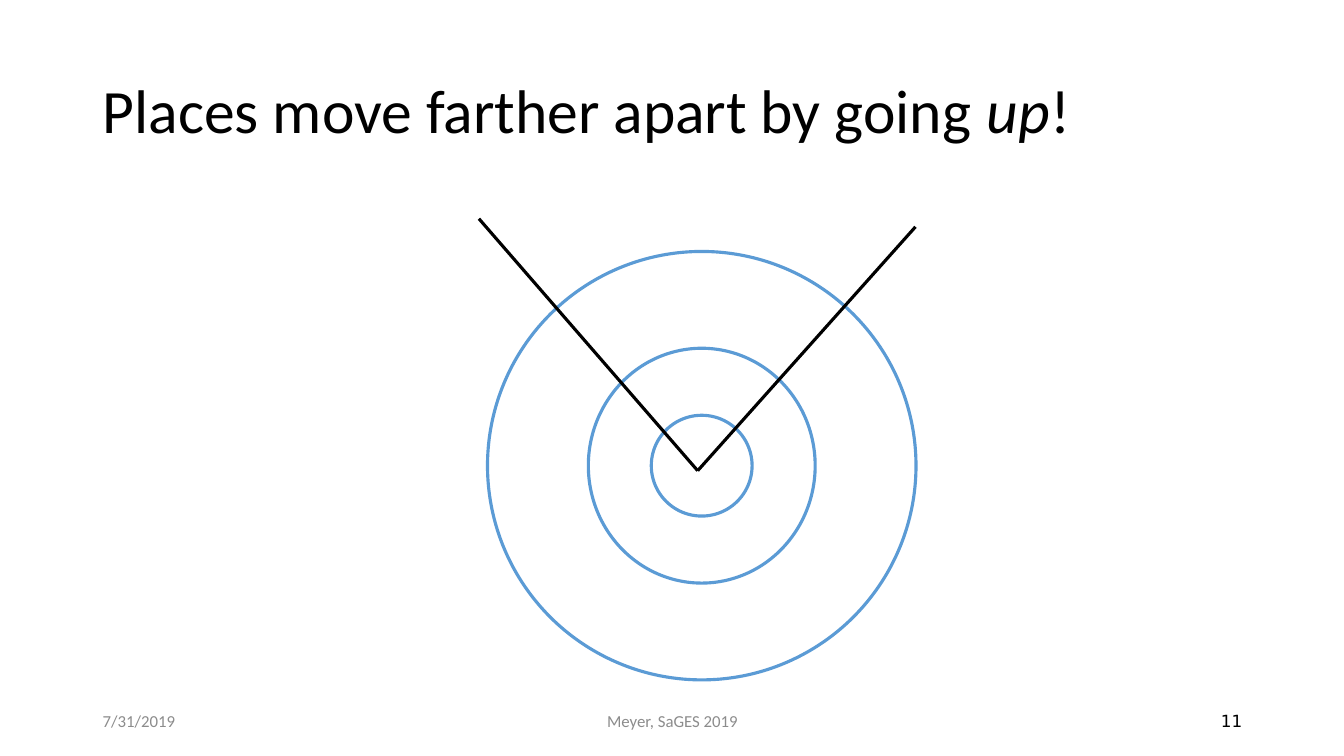
from lxml import etree
from pptx import Presentation
from pptx import util as u
from pptx.dml import color
from pptx.enum import shapes, text
from pptx.oxml import ns

BLACK = "000000"
GREY = "8C8C8C"
BLUE = "5B9BD5"
CENTRE = (6.96, 4.62)
APEX = (6.92, 4.67)


def rgb(value):
    return color.RGBColor.from_string(value)


def add_span(para, words, size, font, ink, italic=False):
    span = para.add_run()
    span.text = words
    span.font.size = u.Pt(size)
    span.font.name = font
    span.font.italic = italic
    span.font.color.rgb = rgb(ink)


def style_line(line, ink):
    line.color.rgb = rgb(ink)
    line.width = u.Pt(2.25)


def set_title(page):
    title = page.shapes.title
    title.left, title.top = u.Inches(0.92), u.Inches(0.4)
    title.width, title.height = u.Inches(11.5), u.Inches(1.45)
    frame = title.text_frame
    frame.word_wrap = True
    frame.auto_size = text.MSO_AUTO_SIZE.NONE
    frame.vertical_anchor = text.MSO_ANCHOR.MIDDLE
    para = frame.paragraphs[0]
    para.alignment = text.PP_ALIGN.LEFT
    para.line_spacing = 0.9
    add_span(para, "Places move farther apart by going ", 44, "Calibri", BLACK)
    add_span(para, "up", 44, "Calibri", BLACK, italic=True)
    add_span(para, "!", 44, "Calibri", BLACK)


def add_footer(page, left, width, words, align, font, ink):
    box = page.shapes.add_textbox(
        u.Inches(left), u.Inches(6.95), u.Inches(width), u.Inches(0.4))
    frame = box.text_frame
    frame.word_wrap = True
    frame.vertical_anchor = text.MSO_ANCHOR.MIDDLE
    para = frame.paragraphs[0]
    para.alignment = align
    add_span(para, words, 12, font, ink)


def add_ring(page, width, height):
    ring = page.shapes.add_shape(
        shapes.MSO_SHAPE.OVAL,
        u.Inches(CENTRE[0] - width / 2), u.Inches(CENTRE[1] - height / 2),
        u.Inches(width), u.Inches(height))
    ring.shadow.inherit = False
    ring.fill.background()
    style_line(ring.line, BLUE)


def add_ray(page, x, y):
    ray = page.shapes.add_connector(
        shapes.MSO_CONNECTOR.STRAIGHT,
        u.Inches(APEX[0]), u.Inches(APEX[1]), u.Inches(x), u.Inches(y))
    style_line(ray.line, BLACK)
    etree.SubElement(ray._element.spPr, ns.qn("a:effectLst"))


def main():
    deck = Presentation()
    deck.slide_width, deck.slide_height = u.Inches(13.33), u.Inches(7.5)
    page = deck.slides.add_slide(deck.slide_layouts[5])

    align = text.PP_ALIGN
    add_footer(page, 0.92, 3, "7/31/2019", align.LEFT, "Calibri", GREY)
    add_footer(page, 4.42, 4.5, "Meyer, SaGES 2019", align.CENTER, "Calibri", GREY)
    add_footer(page, 9.42, 3, "11", align.RIGHT, "DejaVu Sans", BLACK)
    set_title(page)

    for width, height in ((1, 1), (2.25, 2.33), (4.25, 4.25)):
        add_ring(page, width, height)
    for x, y in ((9.08, 2.25), (4.75, 2.17)):
        add_ray(page, x, y)

    deck.save("out.pptx")


if __name__ == "__main__":
    main()
